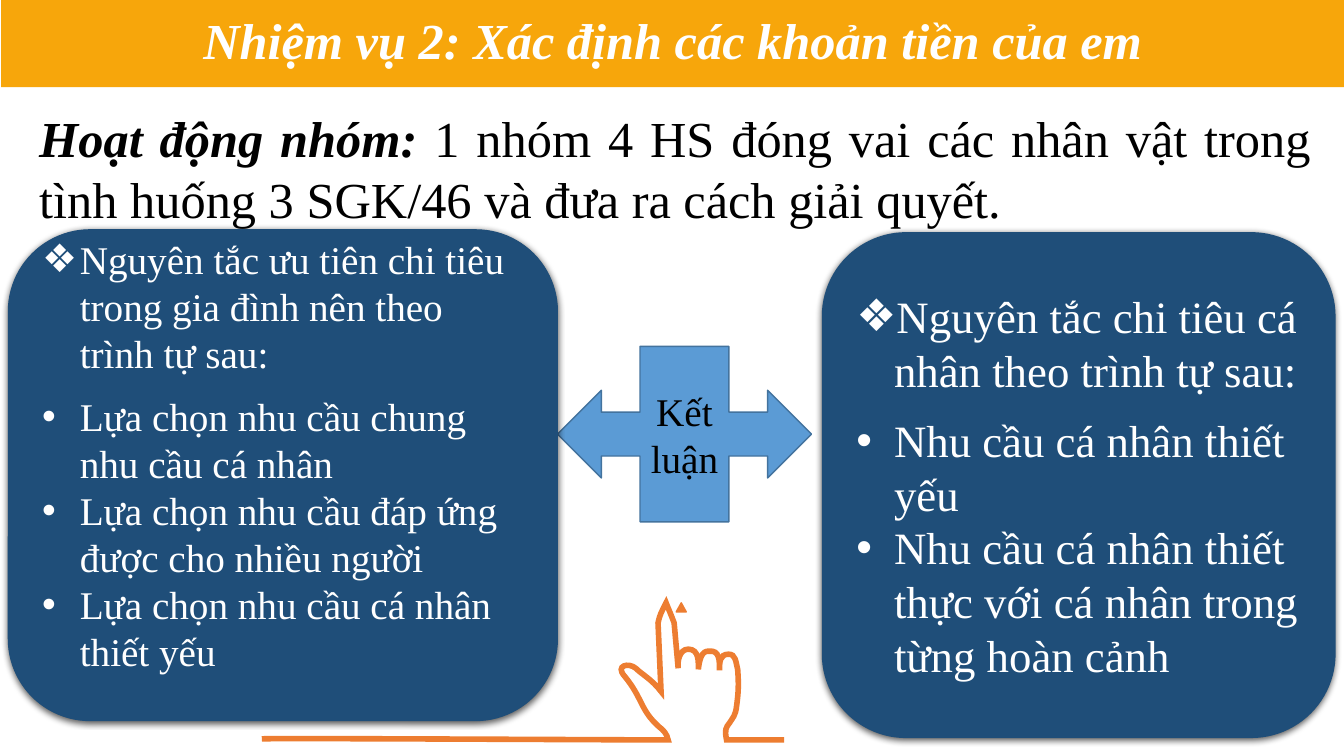
from pptx import Presentation, util as u
from pptx.dml.color import RGBColor
from pptx.enum import shapes, text
from pptx.oxml import parse_xml
from pptx.oxml.ns import nsdecls

FONT = "Times New Roman"
AMBER, NAVY, BLUE, BLUE_EDGE, ORANGE = "F7A60B", "1F4E79", "5B9BD5", "43739E", "ED7D31"
WHITE, BLACK = "FFFFFF", "000000"
MSO = shapes.MSO_SHAPE

# Hand outline on a 518 x 136 grid: pairs are corners, sextuples are Bézier curves
HAND_GRID = 518
HAND = [
    (0, 135), (5, 134, 352, 136, 403, 136), (402, 130, 398, 126, 394, 123),
    (375, 106, 378, 95, 360, 73), (350, 62, 364, 59, 371, 65),
    (377, 71, 387, 76, 396, 88), (393, 20), (395, 11, 396, 10, 401, 0),
    (405, 10, 406, 12, 409, 20), (413, 65), (412, 59, 414, 46, 423, 46),
    (434, 46, 433, 59, 433, 66), (434, 57, 436, 47, 444, 48),
    (454, 47, 454, 57, 454, 67), (454, 59, 454, 51, 463, 51),
    (470, 51, 470, 58, 472, 66), (473, 80, 473, 87, 471, 102),
    (470, 112, 467, 114, 464, 119), (460, 124, 459, 126, 461, 136), (518, 136),
]


def rgb(value):
    return RGBColor.from_string(value)


def style(sp, fill=None, line=None, width=1):
    sp.shadow.inherit = False
    if fill:
        sp.fill.solid()
        sp.fill.fore_color.rgb = rgb(fill)
    else:
        sp.fill.background()
    if line:
        sp.line.color.rgb = rgb(line)
        sp.line.width = u.Pt(width)
    else:
        sp.line.fill.background()


def add_box(parent, kind, box, fill, line=None, width=1):
    sp = parent.add_shape(kind, *(u.Cm(v) for v in box))
    style(sp, fill, line, width)
    tf = sp.text_frame
    tf.word_wrap = True
    tf.vertical_anchor = text.MSO_ANCHOR.MIDDLE
    return sp


def add_run(p, words, size, color, strong=False):
    r = p.add_run()
    r.text = words
    r.font.name = FONT
    r.font.size = u.Pt(size)
    r.font.color.rgb = rgb(color)
    r.font.bold = r.font.italic = strong


def add_title(slide, box, words):
    sp = add_box(slide.shapes, MSO.RECTANGLE, box, AMBER)
    p = sp.text_frame.paragraphs[0]
    p.alignment = text.PP_ALIGN.CENTER
    add_run(p, words, 36, WHITE, strong=True)


def add_task(slide, box, lead, words):
    sp = add_box(slide.shapes, MSO.RECTANGLE, box, WHITE)
    p = sp.text_frame.paragraphs[0]
    p.alignment = text.PP_ALIGN.JUSTIFY
    add_run(p, lead, 36, BLACK, strong=True)
    add_run(p, words, 36, BLACK)


def add_conclusion(slide, box, words):
    sp = add_box(slide.shapes, MSO.LEFT_RIGHT_ARROW_CALLOUT, box, BLUE, BLUE_EDGE)
    for i, value in enumerate((0.25, 0.25, 0.25, 0.35)):
        sp.adjustments[i] = value
    p = sp.text_frame.paragraphs[0]
    p.alignment = text.PP_ALIGN.CENTER
    add_run(p, words, 28, BLACK)


def bend(sp, segments, unit):
    """Turn the straight sides that stand for Bézier segments into curves."""
    sides = sp._element.findall(".//{*}lnTo")
    for side, seg in zip(sides, segments[1:]):
        if len(seg) == 2:
            continue
        pts = "".join(f'<a:pt x="{u.Cm(x * unit)}" y="{u.Cm(y * unit)}"/>'
                      for x, y in zip(seg[::2], seg[1::2]))
        curve = parse_xml(f'<a:cubicBezTo {nsdecls("a")}>{pts}</a:cubicBezTo>')
        side.getparent().replace(side, curve)


def add_hand(slide, box):
    left, top, width = box
    unit = width / HAND_GRID
    corners = [(u.Cm(left + seg[-2] * unit), u.Cm(top + seg[-1] * unit)) for seg in HAND]
    group = slide.shapes.add_group_shape().shapes
    builder = group.build_freeform(*corners[0])
    builder.add_line_segments(corners[1:], close=False)
    hand = builder.convert_to_shape()
    bend(hand, HAND, unit)
    style(hand, line=ORANGE, width=4)
    hand._element.spPr.find("{*}ln").append(
        parse_xml(f'<a:miter {nsdecls("a")} lim="800000"/>'))
    tip = (left + 411 * unit, top, 10 * unit, 9 * unit)
    add_box(group, MSO.ISOSCELES_TRIANGLE, tip, ORANGE, ORANGE)


def add_drop_shadow(sp):
    sp._element.spPr.find("{*}effectLst").append(parse_xml(
        f'<a:outerShdw {nsdecls("a")} blurRad="{u.Pt(4.5)}" dist="{u.Pt(1.5)}" '
        'dir="5400000" rotWithShape="0"><a:srgbClr val="000000">'
        '<a:alpha val="63000"/></a:srgbClr></a:outerShdw>'))


def set_bullet(p, char):
    pPr = p._p.get_or_add_pPr()
    indent = u.Cm(0.95)
    pPr.set("marL", str(indent))
    pPr.set("indent", str(-indent))
    pPr.append(parse_xml(f'<a:buFont {nsdecls("a")} typeface="Arial"/>'))
    pPr.append(parse_xml(f'<a:buChar {nsdecls("a")} char="{char}"/>'))


def add_principles(slide, box, heading, items, size, gap, line=None, bottom=0.13):
    """Rounded panel with a heading and its bulleted steps."""
    sp = add_box(slide.shapes, MSO.ROUNDED_RECTANGLE, box, NAVY, line, 0.75)
    add_drop_shadow(sp)
    tf = sp.text_frame
    tf.margin_bottom = u.Cm(bottom)
    for i, words in enumerate([heading] + items):
        p = tf.add_paragraph() if i else tf.paragraphs[0]
        p.alignment = text.PP_ALIGN.LEFT
        if i == 0:
            p.space_after = u.Pt(gap)
        set_bullet(p, "•" if i else "❖")
        add_run(p, words, size, WHITE)


def main():
    prs = Presentation()
    prs.slide_width, prs.slide_height = u.Cm(33.87), u.Cm(19.05)
    slide = prs.slides.add_slide(prs.slide_layouts[6])
    add_title(slide, (0.03, -0.21, 33.86, 2.41), "Nhiệm vụ 2: Xác định các khoản tiền của em")
    add_task(slide, (0.74, 2.57, 32.56, 3.33), "Hoạt động nhóm: ",
             "1 nhóm 4 HS đóng vai các nhân vật trong tình huống 3 SGK/46 "
             "và đưa ra cách giải quyết.")
    add_conclusion(slide, (14.05, 8.73, 6.4, 4.42), "Kết luận")
    add_hand(slide, (6.6, 15.19, 13.16))
    add_principles(slide, (0.21, 5.79, 13.84, 12.37),
                   "Nguyên tắc ưu tiên chi tiêu trong gia đình nên theo trình tự sau:",
                   ["Lựa chọn nhu cầu chung nhu cầu cá nhân",
                    "Lựa chọn nhu cầu đáp ứng được cho nhiều người",
                    "Lựa chọn nhu cầu cá nhân thiết yếu"],
                   28, 11, line=NAVY, bottom=1.14)
    add_principles(slide, (20.71, 5.85, 12.95, 12.75),
                   "Nguyên tắc chi tiêu cá nhân theo trình tự sau:",
                   ["Nhu cầu cá nhân thiết yếu",
                    "Nhu cầu cá nhân thiết thực với cá nhân trong từng hoàn cảnh"],
                   32, 11.8)
    prs.save("out.pptx")


if __name__ == "__main__":
    main()
